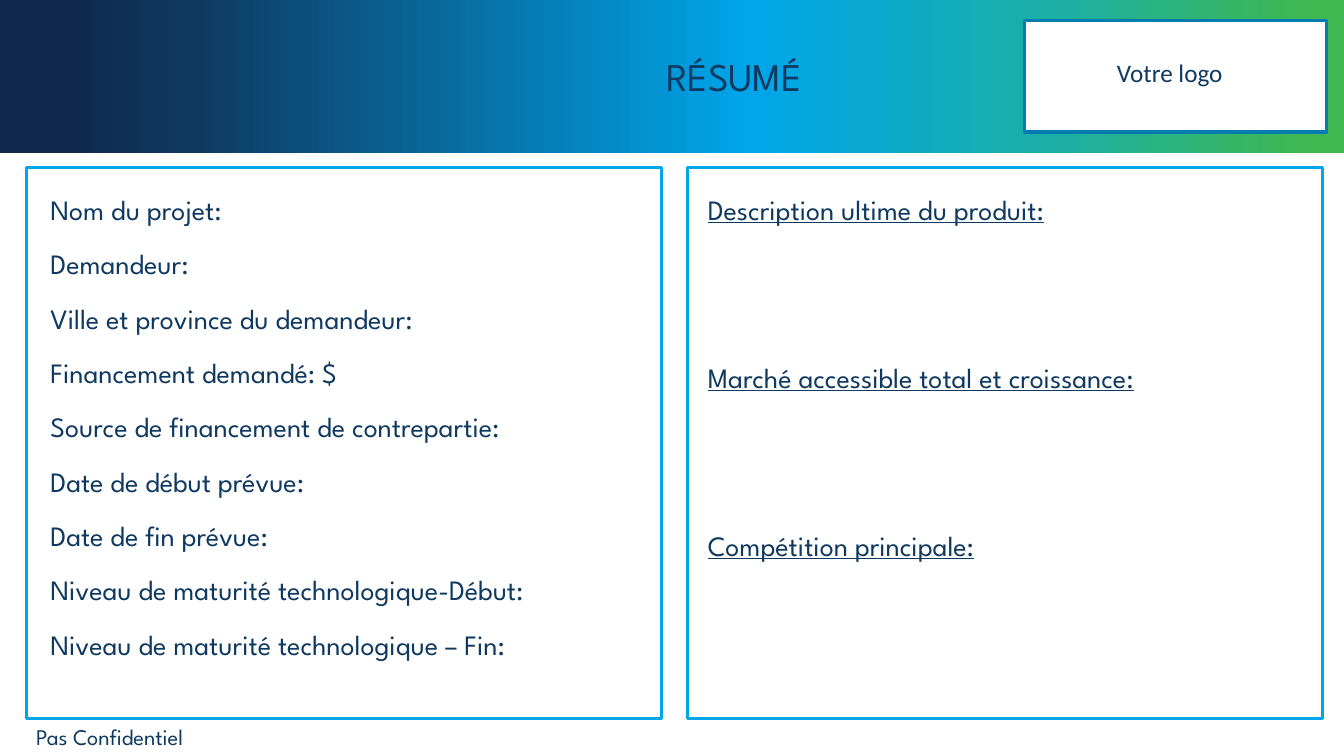
from pptx import Presentation
from pptx.dml.color import RGBColor
from pptx.enum.shapes import MSO_SHAPE
from pptx.enum.text import MSO_ANCHOR, MSO_AUTO_SIZE, PP_ALIGN
from pptx.oxml import parse_xml
from pptx.oxml.ns import nsdecls
from pptx.util import Inches, Pt

RECT = MSO_SHAPE.RECTANGLE
TOP, MIDDLE = MSO_ANCHOR.TOP, MSO_ANCHOR.MIDDLE
LEFT, CENTER, JUSTIFY = PP_ALIGN.LEFT, PP_ALIGN.CENTER, PP_ALIGN.JUSTIFY
FIXED = MSO_AUTO_SIZE.NONE

TITLE = "RÉSUMÉ"
FIELDS = [
    "Nom du projet:",
    "Demandeur:",
    "Ville et province du demandeur:",
    "Financement demandé: $",
    "Source de financement de contrepartie:",
    "Date de début prévue:",
    "Date de fin prévue:",
    "Niveau de maturité technologique-Début:",
    "Niveau de maturité technologique – Fin:",
]
TOPICS = [
    "Description ultime du produit:",
    "Marché accessible total et croissance:",
    "Compétition principale:",
]
LOGO = "Votre logo"
NOTE = "Pas Confidentiel"

NAVY, BLUE, TEAL, WHITE = "0F3960", "00A6E9", "007CAF", "FFFFFF"
STOPS = [(5, "10284C"), (14, NAVY), (56, BLUE), (79, "1DAFA4"), (97, "3EB851")]
SPARTAN = "League Spartan"

WIDE, HIGH = 13.33, 7.5
EDGE, PANEL, GAP = 0.26, 6.3, 0.26


def color(code):
    return RGBColor.from_string(code)


def place(shape, box):
    for name, size in zip(("left", "top", "width", "height"), box):
        setattr(shape, name, Inches(size))


def rect(slide, box, fill=None, line=None):
    shape = slide.shapes.add_shape(RECT, *map(Inches, box))
    shape.shadow.inherit = False
    if fill:
        shape.fill.solid()
        shape.fill.fore_color.rgb = color(fill)
    else:
        shape.fill.background()
    if line:
        shape.line.color.rgb = color(line)
        shape.line.width = Pt(2.25)
    else:
        shape.line.fill.background()
    return shape


def write(shape, lines, size, align=LEFT, anchor=TOP, wrap=True,
          face=SPARTAN, under=False, after=0, pitch=1.0):
    frame = shape.text_frame
    frame.text = "\n".join(lines)
    frame.auto_size = FIXED
    frame.word_wrap = wrap
    frame.vertical_anchor = anchor
    layout = {"alignment": align, "line_spacing": pitch,
              "space_before": Pt(0), "space_after": Pt(after)}
    style = {"name": face, "size": Pt(size), "underline": under}
    for para in frame.paragraphs:
        props = para._p.get_or_add_pPr()
        props.set("marL", "0")
        props.set("indent", "0")
        for name, value in layout.items():
            setattr(para, name, value)
        props.append(parse_xml(f"<a:buNone {nsdecls('a')}/>"))
        for run in para.runs:
            for name, value in style.items():
                setattr(run.font, name, value)
            run.font.color.rgb = color(NAVY)


def blend(shape):
    stops = "".join(
        f'<a:gs pos="{pos * 1000}"><a:srgbClr val="{code}"/></a:gs>'
        for pos, code in STOPS)
    shape.fill.gradient()
    old = shape.element.spPr.find(
        "{http://schemas.openxmlformats.org/drawingml/2006/main}gradFill")
    new = parse_xml(f'<a:gradFill {nsdecls("a")} rotWithShape="1">'
                    f'<a:gsLst>{stops}</a:gsLst>'
                    f'<a:lin ang="0" scaled="0"/></a:gradFill>')
    old.getparent().replace(old, new)


def main():
    deck = Presentation()
    deck.slide_width, deck.slide_height = Inches(WIDE), Inches(HIGH)
    slide = deck.slides.add_slide(deck.slide_layouts[3])
    title, fields, topics = slide.placeholders

    band = rect(slide, (0, 0, WIDE, 1.52))
    blend(band)
    title.element.addprevious(band.element)

    place(title, (5.02, 0.47, 4.52, 0.57))
    write(title, [TITLE], 28, CENTER, MIDDLE)
    place(fields, (0.4, 1.95, 5.54, 4.85))
    write(fields, FIELDS, 20, JUSTIFY, after=22, pitch=0.7)
    place(topics, (6.92, 1.86, 5.89, 4.59))
    write(topics, TOPICS, 20, JUSTIFY, under=True, after=96)

    for col in range(2):
        rect(slide, (EDGE + col * (PANEL + GAP), 1.66, PANEL, 5.47), line=BLUE)

    rect(slide, (10.16, 0.2, 3, 1.11), WHITE, TEAL)
    label = rect(slide, (10.98, 0.52, 1.26, 0.4), WHITE)
    write(label, [LOGO], 18, wrap=False, face="Calibri")

    note = slide.shapes.add_textbox(*map(Inches, (EDGE, 7.12, 2.29, 0.24)))
    write(note, [NOTE], 16)

    deck.save("out.pptx")


if __name__ == "__main__":
    main()
